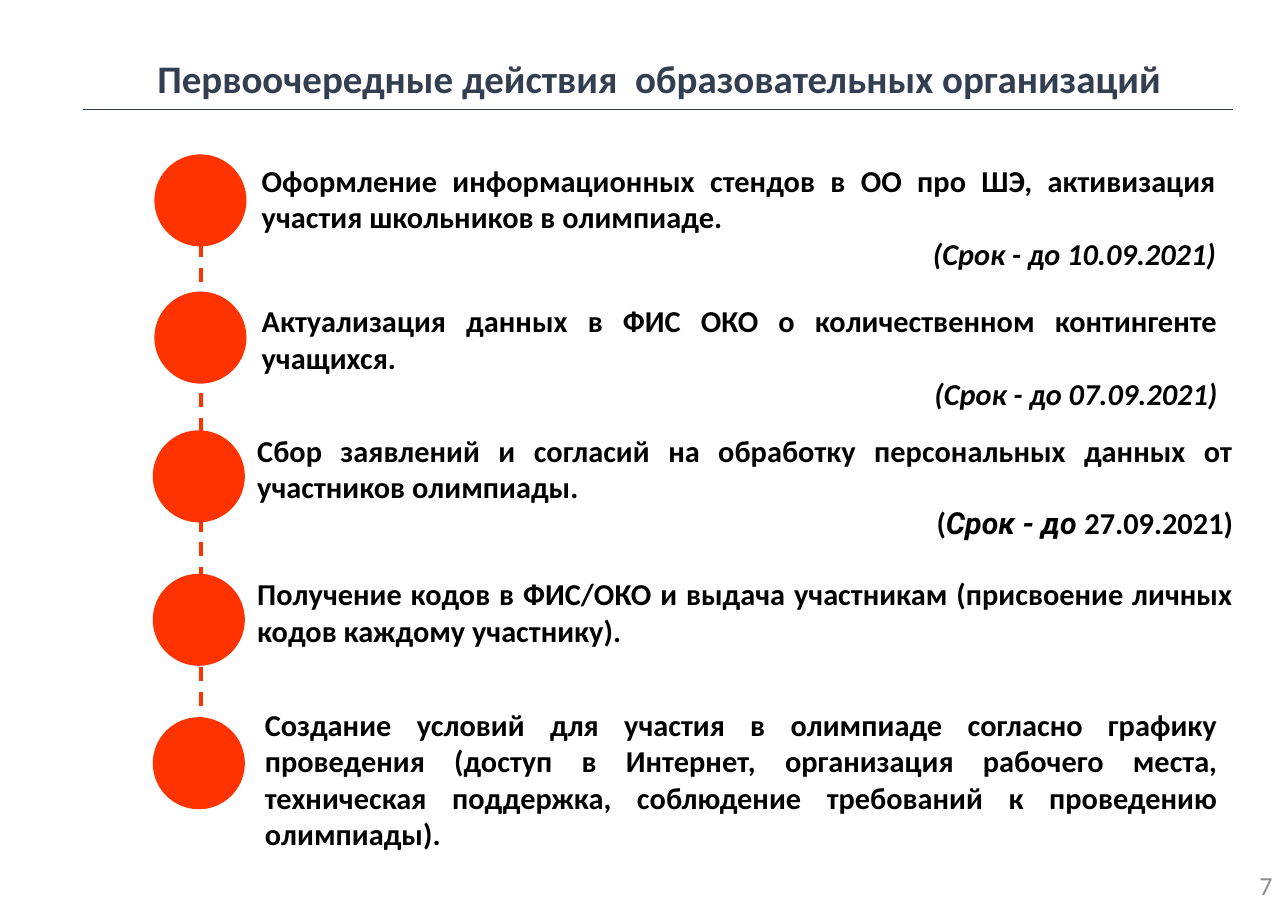
from typing import NamedTuple

from lxml.etree import SubElement
from pptx import Presentation
from pptx.dml.color import RGBColor
from pptx.enum.dml import MSO_LINE
from pptx.enum.shapes import MSO_CONNECTOR, MSO_SHAPE
from pptx.enum.text import MSO_ANCHOR, MSO_AUTO_SIZE, PP_ALIGN
from pptx.oxml.ns import qn
from pptx.slide import Slide
from pptx.text.text import TextFrame, _Paragraph, _Run
from pptx.util import Emu, Pt

EMU_PER_PX = 9144  # 100 px to the inch

SLATE = RGBColor(0x33, 0x3F, 0x50)
ORANGE = RGBColor(0xFF, 0x33, 0x00)
BLACK = RGBColor(0x00, 0x00, 0x00)
GRAY = RGBColor(0x8C, 0x8C, 0x8C)

BODY_FONT = "Calibri"
ACCENT_FONT = "Roboto"
BODY_SIZE = 14
CIRCLE_DIAMETER = 59


class Box(NamedTuple):
    left: int
    top: int
    width: int
    height: int


class Insets(NamedTuple):
    left: int
    top: int
    right: int
    bottom: int


class Part(NamedTuple):
    text: str
    italic: bool = True
    font: str = BODY_FONT


class Action(NamedTuple):
    circle_left: int
    circle_top: int
    box: Box
    insets: Insets
    text: str
    deadline: tuple[Part, ...] = ()


TIGHT = Insets(0, 1, 0, 0)
ROOMY = Insets(10, 5, 10, 5)

ACTIONS = (
    Action(
        99, 99, Box(158, 99, 632, 81), ROOMY,
        "Оформление информационных стендов в ОО про ШЭ, активизация "
        "участия школьников в олимпиаде.",
        (Part("(Срок - до 10.09.2021)"),),
    ),
    Action(
        99, 187, Box(158, 189, 633, 81), ROOMY,
        "Актуализация данных в ФИС ОКО о количественном контингенте учащихся.",
        (Part("(Срок - до 07.09.2021)"),),
    ),
    Action(
        98, 276, Box(165, 276, 626, 72), TIGHT,
        "Сбор заявлений и согласий на обработку персональных данных "
        "от участников олимпиады.",
        (
            Part("(", italic=False),
            Part("Срок - до ", font=ACCENT_FONT),
            Part("27.09.2021)", italic=False),
        ),
    ),
    Action(
        98, 368, Box(165, 368, 626, 48), TIGHT,
        "Получение кодов в ФИС/ОКО и выдача участникам "
        "(присвоение личных кодов каждому участнику).",
    ),
    Action(
        98, 460, Box(160, 448, 631, 104), ROOMY,
        "Создание условий для участия в олимпиаде согласно графику проведения "
        "(доступ в Интернет, организация рабочего места, техническая поддержка, "
        "соблюдение требований к проведению олимпиады).",
    ),
)


def px(length: int) -> Emu:
    return Emu(length * EMU_PER_PX)


def set_up_frame(frame: TextFrame, insets: Insets, anchor: MSO_ANCHOR) -> None:
    frame.word_wrap = True
    frame.auto_size = MSO_AUTO_SIZE.NONE
    frame.vertical_anchor = anchor
    frame.margin_left, frame.margin_top, frame.margin_right, frame.margin_bottom = map(px, insets)


def format_run(run: _Run, size: int, color: RGBColor, bold: bool = True,
               italic: bool = False, name: str = BODY_FONT) -> None:
    font = run.font
    font.name = name
    font.size = Pt(size)
    font.bold = bold
    font.italic = italic
    font.color.rgb = color


def set_text(paragraph: _Paragraph, text: str, alignment: PP_ALIGN, size: int,
             color: RGBColor, bold: bool = True) -> None:
    paragraph.text = text
    paragraph.alignment = alignment
    format_run(paragraph.runs[0], size, color, bold)


def add_text_box(slide: Slide, box: Box, insets: Insets,
                 anchor: MSO_ANCHOR = MSO_ANCHOR.TOP) -> TextFrame:
    frame = slide.shapes.add_textbox(*map(px, box)).text_frame
    set_up_frame(frame, insets, anchor)
    return frame


def add_line(slide: Slide, start: tuple[int, int], end: tuple[int, int], color: RGBColor,
             width: float, dash: MSO_LINE = MSO_LINE.SOLID) -> None:
    connector = slide.shapes.add_connector(
        MSO_CONNECTOR.STRAIGHT, *map(px, start), *map(px, end))
    connector.line.color.rgb = color
    connector.line.width = Pt(width)
    connector.line.dash_style = dash
    SubElement(connector._element.spPr, qn("a:effectLst"))


def add_title(slide: Slide) -> None:
    title = slide.shapes.title
    title.left, title.top, title.width, title.height = map(px, Box(56, 35, 734, 30))
    set_up_frame(title.text_frame, Insets(0, 0, 0, 0), MSO_ANCHOR.MIDDLE)
    set_text(title.text_frame.paragraphs[0],
             "Первоочередные действия  образовательных организаций",
             PP_ALIGN.CENTER, 18, SLATE)


def add_action(slide: Slide, action: Action) -> None:
    circle = slide.shapes.add_shape(
        MSO_SHAPE.OVAL, px(action.circle_left), px(action.circle_top),
        px(CIRCLE_DIAMETER), px(CIRCLE_DIAMETER))
    circle.shadow.inherit = False
    circle.fill.solid()
    circle.fill.fore_color.rgb = ORANGE
    circle.line.fill.background()

    frame = add_text_box(slide, action.box, action.insets)
    set_text(frame.paragraphs[0], action.text, PP_ALIGN.JUSTIFY, BODY_SIZE, BLACK)
    if action.deadline:
        paragraph = frame.add_paragraph()
        paragraph.alignment = PP_ALIGN.RIGHT
        for part in action.deadline:
            run = paragraph.add_run()
            run.text = part.text
            format_run(run, BODY_SIZE, BLACK, italic=part.italic, name=part.font)


def add_page_number(slide: Slide) -> None:
    frame = add_text_box(slide, Box(776, 552, 50, 31), ROOMY, MSO_ANCHOR.MIDDLE)
    set_text(frame.paragraphs[0], "7", PP_ALIGN.RIGHT, 12, GRAY, bold=False)


def main() -> None:
    presentation = Presentation()
    presentation.slide_width, presentation.slide_height = px(826), px(583)
    slide = presentation.slides.add_slide(presentation.slide_layouts.get_by_name("Title Only"))

    add_title(slide)
    add_line(slide, (53, 70), (791, 70), SLATE, 0.5)
    add_line(slide, (129, 108), (129, 502), ORANGE, 1.65, MSO_LINE.DASH)
    for action in ACTIONS:
        add_action(slide, action)
    add_page_number(slide)

    presentation.save("out.pptx")


if __name__ == "__main__":
    main()
